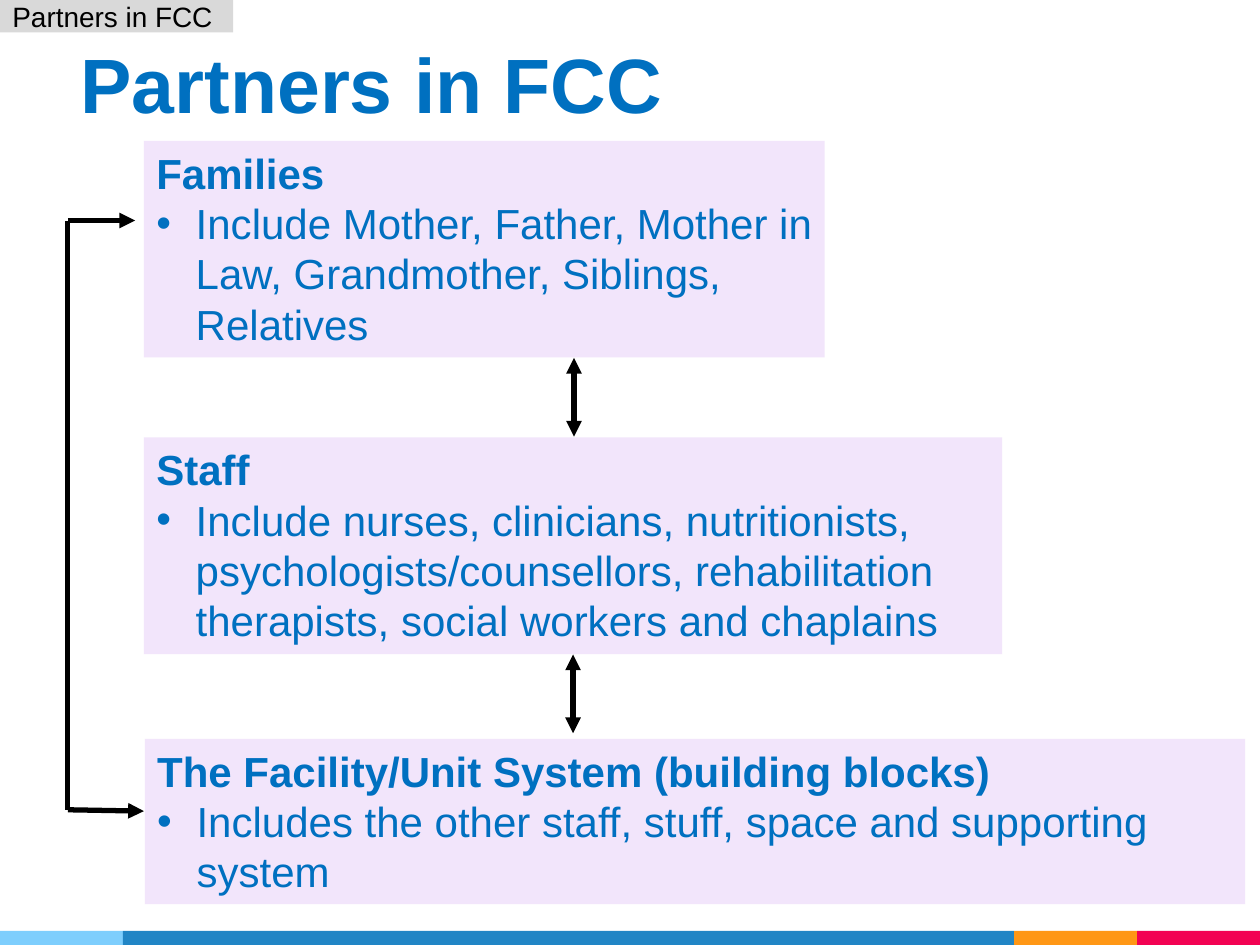
import pptx
import pptx.util
import pptx.dml.color
import pptx.enum.shapes
import pptx.enum.text
import pptx.oxml
import pptx.oxml.ns

Pt = pptx.util.Pt
ANCHOR = pptx.enum.text.MSO_ANCHOR
ALIGN = pptx.enum.text.PP_ALIGN
WIDTH, HEIGHT = 720, 540
FONT = "Arial"
COLORS = {
    "text": "0070C0", "black": "000000", "tab": "D9D9D9", "panel": "F2E5FB",
    "sky": "7ECEFD", "blue": "2185C5", "orange": "FF9715", "pink": "F20253",
}
PARTNERS = [
    ((82.25, 80.5, 389, 123.8), "Families",
     "Include Mother, Father, Mother in Law, Grandmother, Siblings, Relatives"),
    ((82.25, 250, 490.5, 123.8), "Staff",
     "Include nurses, clinicians, nutritionists, psychologists/counsellors, "
     "rehabilitation therapists, social workers and chaplains"),
    ((82.75, 422.25, 628.75, 94.5), "The Facility/Unit System (building blocks)",
     "Includes the other staff, stuff, space and supporting system"),
]


def color(name):
    return pptx.dml.color.RGBColor.from_string(COLORS[name])


def add_element(parent, tag, **attributes):
    element = pptx.oxml.parse_xml(f"<a:{tag} {pptx.oxml.ns.nsdecls('a')}/>")
    for key, value in attributes.items():
        element.set(key, value)
    parent.append(element)


def style(paragraph, size, color_name, bold=False):
    paragraph.alignment = ALIGN.LEFT
    paragraph.font.name = FONT
    paragraph.font.size = Pt(size)
    paragraph.font.bold = bold
    paragraph.font.color.rgb = color(color_name)


def add_block(slide, box, fill):
    """Add a plain filled rectangle without outline or shadow."""
    shape = slide.shapes.add_shape(
        pptx.enum.shapes.MSO_SHAPE.RECTANGLE, *map(Pt, box))
    shape.shadow.inherit = False
    shape.fill.solid()
    shape.fill.fore_color.rgb = color(fill)
    shape.line.fill.background()
    return shape


def add_footer(slide, box):
    left, top, width, height = box
    end = 70.25
    segments = [("sky", end), ("blue", width - 3 * end),
                ("orange", end), ("pink", end)]
    for name, segment in segments:
        add_block(slide, (left, top, segment, height), name)
        left += segment


def add_title(slide, box, text):
    frame = slide.shapes.add_textbox(*map(Pt, box)).text_frame
    frame.word_wrap = True
    frame.vertical_anchor = ANCHOR.BOTTOM
    frame.margin_top = frame.margin_bottom = Pt(7.2)
    frame.text = text
    style(frame.paragraphs[0], 44, "text", bold=True)


def add_tab(slide, box, text):
    frame = add_block(slide, box, "tab").text_frame
    frame.vertical_anchor = ANCHOR.MIDDLE
    frame.text = text
    style(frame.paragraphs[0], 16, "black")


def add_partner(slide, box, heading, detail):
    frame = add_block(slide, box, "panel").text_frame
    frame.word_wrap = True
    frame.vertical_anchor = ANCHOR.TOP
    frame.text = heading
    style(frame.paragraphs[0], 24, "text", bold=True)
    paragraph = frame.add_paragraph()
    paragraph.text = detail
    indent = Pt(22.5)
    properties = paragraph._p.get_or_add_pPr()
    properties.set("marL", str(indent))
    properties.set("indent", str(-indent))
    add_element(properties, "buFont", typeface=FONT)
    add_element(properties, "buChar", char="•")
    style(paragraph, 24, "text")


def add_line(slide, start, end, head=False, tail=False):
    """Add a straight line, with arrowheads at its start (head) or end (tail)."""
    connector = slide.shapes.add_connector(
        pptx.enum.shapes.MSO_CONNECTOR.STRAIGHT, *map(Pt, (*start, *end)))
    connector.line.width = Pt(3)
    connector.line.color.rgb = color("black")
    line = connector.line._get_or_add_ln()
    if head:
        add_element(line, "headEnd", type="triangle")
    if tail:
        add_element(line, "tailEnd", type="triangle")
    add_element(connector._element.spPr, "effectLst")


def add_loop(slide, box):
    """Join the first and last partner along the left side."""
    left, top, width, height = box
    bottom = top + height
    add_line(slide, (left, top), (left + width - 5, top), tail=True)
    add_line(slide, (left, bottom), (left + width, bottom + 0.75), tail=True)
    add_line(slide, (left, top), (left, bottom))


def main():
    presentation = pptx.Presentation()
    presentation.slide_width, presentation.slide_height = Pt(WIDTH), Pt(HEIGHT)
    slide = presentation.slides.add_slide(presentation.slide_layouts[6])
    add_footer(slide, (0, 532, WIDTH, 8))
    add_title(slide, (39, 27.25, 620, 53.5), "Partners in FCC")
    add_tab(slide, (0, 0, 133.25, 18.5), "Partners in FCC")
    for box, heading, detail in PARTNERS:
        add_partner(slide, box, heading, detail)
    add_loop(slide, (38.75, 126, 43.5, 336.75))
    for x, top in ((328, 204.5), (327.5, 374)):
        add_line(slide, (x, top), (x, top + 45), head=True, tail=True)
    presentation.save("out.pptx")


if __name__ == "__main__":
    main()
